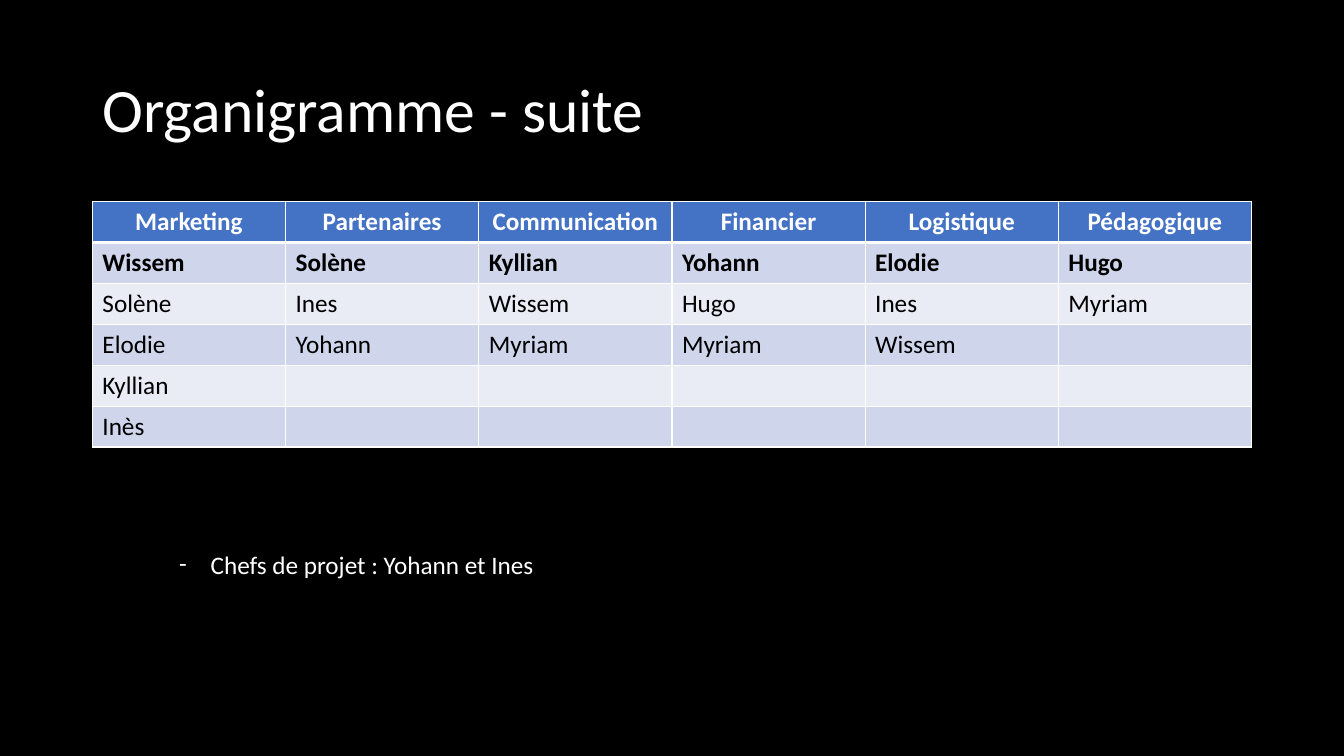
from lxml.etree import SubElement as Sub
from pptx import Presentation
from pptx.dml.color import RGBColor as RGB
from pptx.enum.text import MSO_ANCHOR as Anchor, MSO_AUTO_SIZE as Fit, PP_ALIGN as Align
from pptx.oxml.ns import qn
from pptx.util import Pt

PX = 9525  # EMU per px, 96 px to the inch
BLACK = RGB(0x00, 0x00, 0x00)
WHITE = RGB(0xFF, 0xFF, 0xFF)
BLUE = RGB(0x44, 0x72, 0xC4)
BANDS = [RGB(0xE9, 0xEB, 0xF5), RGB(0xCF, 0xD5, 0xEA)]

TEAMS = {
    "Marketing": ["Wissem", "Solène", "Elodie", "Kyllian", "Inès"],
    "Partenaires": ["Solène", "Ines", "Yohann"],
    "Communication": ["Kyllian", "Wissem", "Myriam"],
    "Financier": ["Yohann", "Hugo", "Myriam"],
    "Logistique": ["Elodie", "Ines", "Wissem"],
    "Pédagogique": ["Hugo", "Myriam"],
}


class Deck:
    font = "Calibri"
    size = 18

    def __init__(self, wide, high):
        self.prs = Presentation()
        self.prs.slide_width, self.prs.slide_height = wide * PX, high * PX
        self.slide = self.prs.slides.add_slide(self.prs.slide_layouts[1])
        back = self.slide.background.fill
        back.solid()
        back.fore_color.rgb = BLACK

    def place(self, shape, x, y, w, h):
        shape.left, shape.top = x * PX, y * PX
        shape.width, shape.height = w * PX, h * PX

    def add_text(self, para, text, color, size=None, bold=False):
        run = para.add_run()
        run.text = text
        run.font.name = self.font
        run.font.size = Pt(size or self.size)
        run.font.bold = bold
        run.font.color.rgb = color

    def title(self, text, *box):
        shape = self.slide.shapes.title
        self.place(shape, *box)
        frame = shape.text_frame
        frame.auto_size = Fit.NONE
        frame.vertical_anchor = Anchor.MIDDLE
        para = frame.paragraphs[0]
        para.alignment = Align.LEFT
        para.line_spacing = 0.9
        self.add_text(para, text, WHITE, size=44)

    def bullets(self, items, *box, indent=30):
        shape = self.slide.placeholders[1]
        self.place(shape, *box)
        frame = shape.text_frame
        frame.auto_size = Fit.SHAPE_TO_FIT_TEXT
        frame.vertical_anchor = Anchor.TOP
        for i, item in enumerate(items):
            para = frame.add_paragraph() if i else frame.paragraphs[0]
            para.space_before = Pt(0)
            props = para._p.get_or_add_pPr()
            props.set("marL", str(indent * PX))
            props.set("indent", str(-indent * PX))
            Sub(props, qn("a:buFont"), typeface=self.font)
            Sub(props, qn("a:buChar"), char="-")
            self.add_text(para, item, WHITE)

    def border(self, cell, **widths):
        props = cell._tc.get_or_add_tcPr()
        for i, side in enumerate("LRTB"):
            line = Sub(props, qn("a:ln" + side), w=str(Pt(widths.get(side, 1))))
            Sub(Sub(line, qn("a:solidFill")), qn("a:srgbClr"), val=str(WHITE))
            props.insert(i, line)  # borders come before the fill

    def table(self, teams, x, y, w, row):
        count = 1 + max(map(len, teams.values()))
        grid = self.slide.shapes.add_table(
            count, len(teams), x * PX, y * PX, w * PX, count * row * PX).table
        grid.horz_banding = False
        for c, (team, names) in enumerate(teams.items()):
            texts = [team] + names + [""] * (count - 1 - len(names))
            for r, text in enumerate(texts):
                cell = grid.cell(r, c)
                cell.fill.solid()
                cell.fill.fore_color.rgb = BANDS[r % 2] if r else BLUE
                self.border(cell, **({0: {"B": 3}, 1: {"T": 3}}.get(r, {})))
                para = cell.text_frame.paragraphs[0]
                para.alignment = Align.LEFT if r else Align.CENTER
                if text:
                    self.add_text(para, text, BLACK if r else WHITE, bold=r < 2)


def main():
    deck = Deck(1280, 720)
    # Heading
    deck.title("Organigramme - suite", 88, 38, 1104, 139)
    # Teams, with each leader in bold
    deck.table(TEAMS, 88, 192, 1104, 39)
    # Project leads
    deck.bullets(["Chefs de projet : Yohann et Ines"], 161, 518, 927, 39)
    deck.prs.save("out.pptx")


if __name__ == "__main__":
    main()
